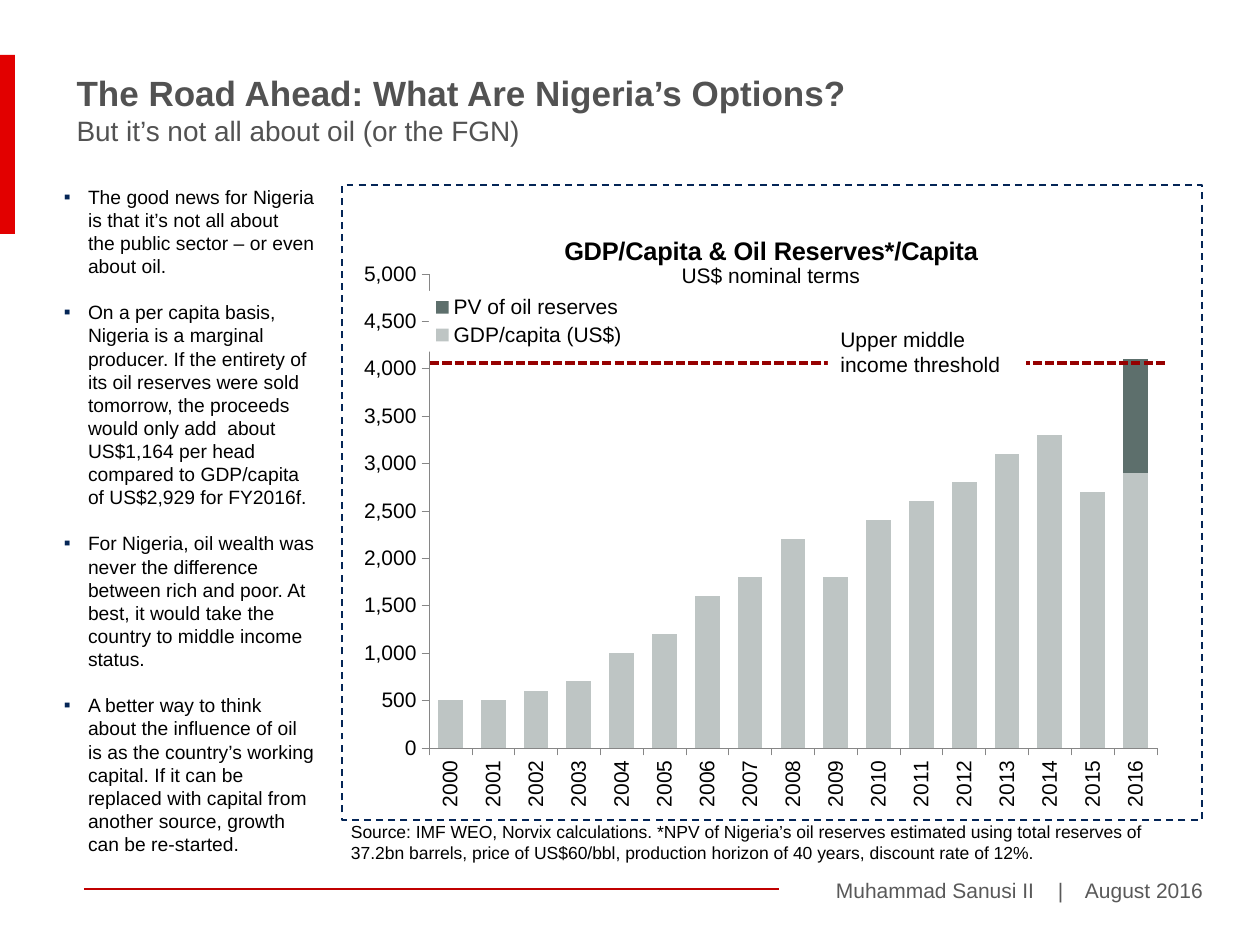
"""Build a slide on Nigeria's options with bullet points and a stacked column chart."""
from lxml import etree
from pptx import Presentation
from pptx import util as u
from pptx.chart.data import CategoryChartData
from pptx.dml.color import RGBColor
from pptx.enum import chart as charts, dml, shapes, text
from pptx.oxml import parse_xml
from pptx.oxml.ns import nsdecls, qn

PX = 914400 / 126
BLACK = RGBColor(0x00, 0x00, 0x00)
WHITE = RGBColor(0xFF, 0xFF, 0xFF)
GREY = RGBColor(0x52, 0x52, 0x52)
FOOTER_GREY = RGBColor(0x59, 0x59, 0x59)
AXIS_GREY = RGBColor(0x86, 0x86, 0x86)
RED = RGBColor(0xE2, 0x00, 0x00)
RULE_RED = RGBColor(0xC0, 0x00, 0x00)
THRESHOLD_RED = RGBColor(0x96, 0x00, 0x00)
NAVY = RGBColor(0x04, 0x25, 0x56)
PALE = RGBColor(0xBE, 0xC5, 0xC4)
SLATE = RGBColor(0x5D, 0x6F, 0x6C)


def px(*lengths):
    return [u.Emu(round(length * PX)) for length in lengths]


def set_font(font, size, color, bold=False):
    font.name, font.size, font.bold = "Arial", u.Pt(size), bold
    font.color.rgb = color


deck = Presentation()
deck.slide_width, deck.slide_height = px(1260, 945)
page = deck.slides.add_slide(deck.slide_layouts[1])
title, body = page.placeholders

title.left, title.top, title.width, title.height = px(64, 65, 1091, 89)
title.text_frame.text = "The Road Ahead: What Are Nigeria’s Options?\nBut it’s not all about oil (or the FGN)"
title.text_frame.auto_size = text.MSO_AUTO_SIZE.NONE
title.text_frame.vertical_anchor = text.MSO_ANCHOR.MIDDLE
for para, size, bold in zip(title.text_frame.paragraphs, (20, 16), (True, False)):
    para.alignment = text.PP_ALIGN.LEFT
    set_font(para.font, size, GREY, bold)

points = [
    "The good news for Nigeria is that it’s not all about  the public sector – or even about oil.",
    "On a per capita basis, Nigeria is a marginal producer. If the entirety of its oil reserves were sold "
    "tomorrow, the proceeds would only add  about US$1,164 per head compared to GDP/capita of US$2,929 for FY2016f.",
    "For Nigeria, oil wealth was never the difference between rich and poor. At best, it would take the "
    "country to middle income status.",
    "A better way to think about the influence of oil is as the country’s working capital. If it can be "
    "replaced with capital from another source, growth can be re-started.",
]
body.left, body.top, body.width, body.height = px(64, 185, 251, 684)
frame = body.text_frame
frame.text = "\n".join(points)
frame.auto_size = text.MSO_AUTO_SIZE.NONE
frame.margin_left = frame.margin_top = frame.margin_right = frame.margin_bottom = 0
for number, para in enumerate(frame.paragraphs):
    para.level = 1
    para.line_spacing = 1.0
    para.space_before = u.Pt(13.2 if number else 0)
    set_font(para.font, 11, BLACK)
    indent = px(24)[0]
    props = para._p.get_or_add_pPr()
    props.set("marL", str(indent))
    props.set("indent", str(-indent))
    bullet_color = parse_xml(f'<a:buClr {nsdecls("a")}><a:srgbClr val="{NAVY}"/></a:buClr>')
    bullet = parse_xml(f'<a:buChar {nsdecls("a")} char="▪"/>')
    props.find(qn("a:defRPr")).addprevious(bullet_color)
    bullet_color.addnext(bullet)

accent = page.shapes.add_shape(shapes.MSO_SHAPE.RECTANGLE, *px(0, 55, 15, 179))
accent.shadow.inherit = False
accent.fill.solid()
accent.fill.fore_color.rgb = RED
accent.line.fill.background()

data = CategoryChartData(number_format="#,##0")
data.categories = [str(year) for year in range(2000, 2017)]
data.add_series("GDP/capita (US$)", [500, 500, 600, 700, 1000, 1200, 1600, 1800, 2200, 1800,
                                     2400, 2600, 2800, 3100, 3300, 2700, 2900])
data.add_series("PV of oil reserves", [0] * 16 + [1200])
chart = page.shapes.add_chart(charts.XL_CHART_TYPE.COLUMN_STACKED, *px(354, 212, 833, 607), data).chart
set_font(chart.font, 10, BLACK)
plot = chart.plots[0]
plot.gap_width, plot.overlap, plot.vary_by_categories = 73, 100, False
for series, color in zip(plot.series, (PALE, SLATE)):
    series.format.fill.solid()
    series.format.fill.fore_color.rgb = color

for axis in (chart.category_axis, chart.value_axis):
    set_font(axis.tick_labels.font, 12, BLACK)
    axis.has_major_gridlines = False
    axis.major_tick_mark = charts.XL_TICK_MARK.OUTSIDE
    axis.format.line.color.rgb = AXIS_GREY
    axis.format.line.width = u.Pt(0.25)
chart.category_axis._element.find(qn("c:txPr")).find(qn("a:bodyPr")).set("rot", "-5400000")
values = chart.value_axis
values.minimum_scale, values.maximum_scale, values.major_unit = 0, 5000, 500
values.tick_labels.number_format = "#,##0"
values.tick_labels.number_format_is_linked = False

chart.has_title = True
heading = chart.chart_title
heading.text_frame.text = "GDP/Capita & Oil Reserves*/Capita\nUS$ nominal terms"
for para, size, bold in zip(heading.text_frame.paragraphs, (14.5, 12), (True, False)):
    set_font(para.font, size, BLACK, bold)

chart.has_legend = True
legend = chart.legend
legend.position = charts.XL_LEGEND_POSITION.RIGHT
legend.include_in_layout = False
set_font(legend.font, 12, BLACK)
legend._element.find(qn("c:txPr")).addprevious(parse_xml(
    f'<c:spPr {nsdecls("c", "a")}><a:solidFill><a:srgbClr val="{WHITE}"/></a:solidFill></c:spPr>'))

plot_area = chart._chartSpace.chart.plotArea
layouts = [
    (plot_area, 0, {"layoutTarget": "inner", "xMode": "edge", "yMode": "edge",
                    "x": 0.09, "y": 0.102, "w": 0.874, "h": 0.781}),
    (heading._element, 1, {"xMode": "edge", "yMode": "edge", "x": 0.248, "y": 0.032}),
    (legend._element, 1, {"xMode": "edge", "yMode": "edge", "x": 0.09, "y": 0.13, "w": 0.24, "h": 0.1}),
]
for element, position, settings in layouts:
    for old in element.findall(qn("c:layout")):
        element.remove(old)
    layout = parse_xml(f'<c:layout {nsdecls("c")}><c:manualLayout/></c:layout>')
    for name, value in settings.items():
        etree.SubElement(layout[0], qn(f"c:{name}")).set("val", str(value))
    element.insert(position, layout)

for left, right, y, color, width, dash in [
    (84, 779, 889, RULE_RED, 1.5, dml.MSO_LINE.SOLID),
    (430, 1166, 363, THRESHOLD_RED, 1.75, dml.MSO_LINE.SQUARE_DOT),
]:
    rule = page.shapes.add_connector(shapes.MSO_CONNECTOR.STRAIGHT, *px(left, y, right, y))
    rule.line.color.rgb = color
    rule.line.width = u.Pt(width)
    rule.line.dash_style = dash
    etree.SubElement(rule._element.spPr, qn("a:effectLst"))

threshold = page.shapes.add_shape(shapes.MSO_SHAPE.RECTANGLE, *px(828, 320, 198, 63))
threshold.shadow.inherit = False
threshold.fill.solid()
threshold.fill.fore_color.rgb = WHITE
threshold.line.fill.background()
threshold.text_frame.text = "Upper middle income threshold"
threshold.text_frame.word_wrap = True
para = threshold.text_frame.paragraphs[0]
para.alignment = text.PP_ALIGN.LEFT
set_font(para.font, 12, BLACK)

border = page.shapes.add_shape(shapes.MSO_SHAPE.RECTANGLE, *px(342, 185, 860, 635))
border.shadow.inherit = False
border.fill.background()
border.line.color.rgb = NAVY
border.line.width = u.Pt(1)
border.line.dash_style = dml.MSO_LINE.DASH

source = page.shapes.add_textbox(*px(342, 817, 846, 52)).text_frame
source.word_wrap = True
source.margin_left, source.margin_top, source.margin_right, source.margin_bottom = px(9, 4, 9, 5)
source.text = ("Source: IMF WEO, Norvix calculations. *NPV of Nigeria’s oil reserves estimated using total reserves "
               "of 37.2bn barrels, price of US$60/bbl, production horizon of 40 years, discount rate of 12%.")
set_font(source.paragraphs[0].font, 10, BLACK)

footer = page.shapes.add_textbox(*px(709, 871, 507, 38)).text_frame
footer.word_wrap = True
footer.margin_left, footer.margin_right = px(127, 0)
footer.text = "Muhammad Sanusi II\t|\tAugust 2016"
para = footer.paragraphs[0]
set_font(para.font, 12, FOOTER_GREY)
tabs = parse_xml(f'<a:tabLst {nsdecls("a")}/>')
for stop in px(222, 249):
    etree.SubElement(tabs, qn("a:tab"), pos=str(stop), algn="l")
para._p.pPr.find(qn("a:defRPr")).addprevious(tabs)

deck.save("out.pptx")
